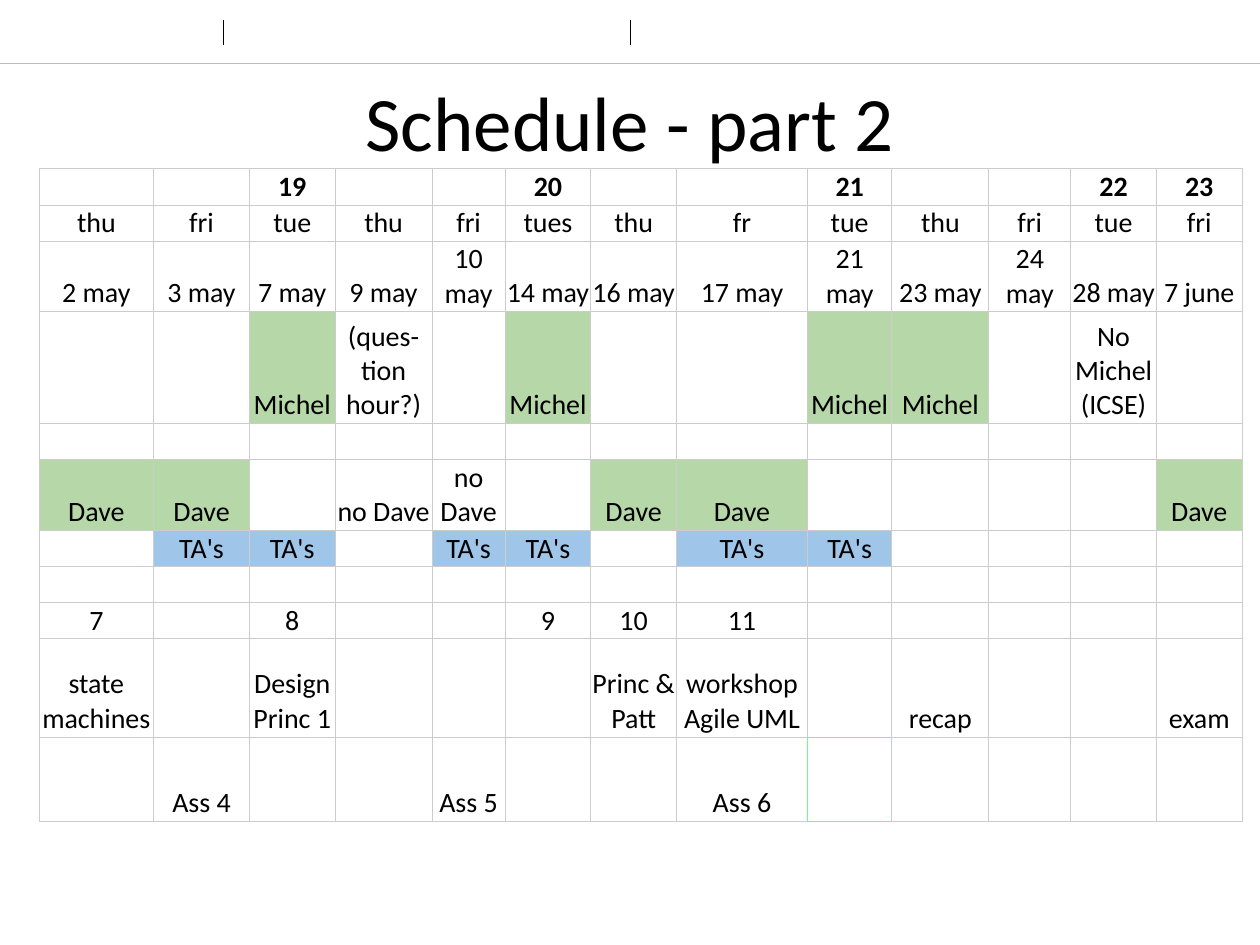
import dataclasses
import pptx
import pptx.dml.color
import pptx.enum.shapes
import pptx.enum.text
import pptx.oxml
import pptx.oxml.ns
import pptx.util
import lxml.etree


@dataclasses.dataclass(frozen=True)
class Theme:
    font: str = "Calibri"
    head: int = 44
    body: int = 16
    ink: str = "000000"
    paper: str = "FFFFFF"
    rule: str = "C4BD97"
    grid: str = "CCCCCC"
    mark: str = "70F993"
    staff: str = "B6D7A8"
    aid: str = "9FC5E8"
    thin: float = 0.25
    line: float = 0.5


THEME = Theme()
WIDE, HIGH = pptx.util.Inches(10), pptx.util.Inches(7.5)
PAD = pptx.util.Inches(0.01)
COLS = [91, 76, 68, 77, 58, 68, 68, 104, 67, 77, 65, 68, 68]
ROWS = [28, 28, 56, 89, 28, 56, 28, 28, 28, 78, 67]
PLAN = """
||19|||20|||21|||22|23
thu|fri|tue|thu|fri|tues|thu|fr|tue|thu|fri|tue|fri
2 may|3 may|7 may|9 may|10 may|14 may|16 may|17 may|21 may|23 may|24 may|28 may|7 june
||Michel|(ques-tion hour?)||Michel|||Michel|Michel||No Michel (ICSE)|
||||||||||||
Dave|Dave||no Dave|no Dave||Dave|Dave|||||Dave
|TA's|TA's||TA's|TA's||TA's|TA's||||
||||||||||||
7||8|||9|10|11|||||
state machines||Design Princ 1||||Princ & Patt|workshop Agile UML||recap|||exam
|Ass 4|||Ass 5|||Ass 6|||||
"""
FILLS = {"Michel": THEME.staff, "Dave": THEME.staff, "TA's": THEME.aid}
MARKS = {(9, 8): "B", (10, 7): "R", (10, 8): "LTB"}


def tint(code):
    return pptx.dml.color.RGBColor.from_string(code)


def scale(box):
    x, y, w, h = box
    return int(x * WIDE), int(y * HIGH), int(w * WIDE), int(h * HIGH)


def write(para, text, size, bold=False):
    para.alignment = pptx.enum.text.PP_ALIGN.CENTER
    run = para.add_run()
    run.text = text
    run.font.name = THEME.font
    run.font.size = pptx.util.Pt(size)
    run.font.bold = bold
    run.font.color.rgb = tint(THEME.ink)


def draw_line(slide, start, end, color, width):
    kind = pptx.enum.shapes.MSO_CONNECTOR.STRAIGHT
    line = slide.shapes.add_connector(kind, *start, *end)
    line.line.color.rgb = tint(color)
    line.line.width = pptx.util.Pt(width)
    props = line._element.spPr
    lxml.etree.SubElement(props, pptx.oxml.ns.qn("a:effectLst"))


def add_band(slide, box):
    x, y, w, h = scale(box)
    draw_line(slide, (x, y + h), (x + w, y + h), THEME.rule, THEME.thin)
    for share in (0.177, 0.5):
        tick = x + int(w * share)
        draw_line(slide, (tick, y + int(h * 0.32)), (tick, y + int(h * 0.72)),
                  THEME.ink, THEME.line)


def add_title(slide, box):
    frame = slide.shapes.add_textbox(*scale(box)).text_frame
    frame.word_wrap = True
    frame.vertical_anchor = pptx.enum.text.MSO_ANCHOR.MIDDLE
    write(frame.paragraphs[0], "Schedule - part 2", THEME.head)


def edge(cell, marks):
    props = cell._tc.get_or_add_tcPr()
    for side in "LRTB":
        color = THEME.mark if side in marks else THEME.grid
        props.append(pptx.oxml.parse_xml(
            f'<a:ln{side} {pptx.oxml.ns.nsdecls("a")} w="{pptx.util.Pt(THEME.line)}">'
            f'<a:solidFill><a:srgbClr val="{color}"/></a:solidFill></a:ln{side}>'))


def fill_cell(cell, text, bold, marks):
    cell.margin_left = cell.margin_right = PAD
    cell.margin_top = cell.margin_bottom = PAD
    cell.vertical_anchor = pptx.enum.text.MSO_ANCHOR.BOTTOM
    edge(cell, marks)
    cell.fill.solid()
    cell.fill.fore_color.rgb = tint(FILLS.get(text, THEME.paper))
    para = cell.text_frame.paragraphs[0]
    if text:
        write(para, text, THEME.body, bold)
    else:
        tail = lxml.etree.SubElement(para._p, pptx.oxml.ns.qn("a:endParaRPr"))
        tail.set("sz", str(THEME.body * 100))


def add_plan(slide, box):
    x, y, w, h = scale(box)
    table = slide.shapes.add_table(len(ROWS), len(COLS), x, y, w, h).table
    table.first_row = table.horz_banding = False
    for col, part in zip(table.columns, COLS):
        col.width = w * part // sum(COLS)
    for row, part in zip(table.rows, ROWS):
        row.height = h * part // sum(ROWS)
    for r, line in enumerate(PLAN.strip("\n").split("\n")):
        for c, text in enumerate(line.split("|")):
            fill_cell(table.cell(r, c), text, r == 0, MARKS.get((r, c), ""))


def main():
    deck = pptx.Presentation()
    deck.slide_width, deck.slide_height = WIDE, HIGH
    slide = deck.slides.add_slide(deck.slide_layouts[6])
    add_band(slide, (0, 0, 1, 0.5 / 7.5))
    add_title(slide, (0.05, 0.5 / 7.5, 0.9, 0.92 / 7.5))
    add_plan(slide, (0.031, 1.34 / 7.5, 0.955, 5.14 / 7.5))
    deck.save("out.pptx")


if __name__ == "__main__":
    main()
